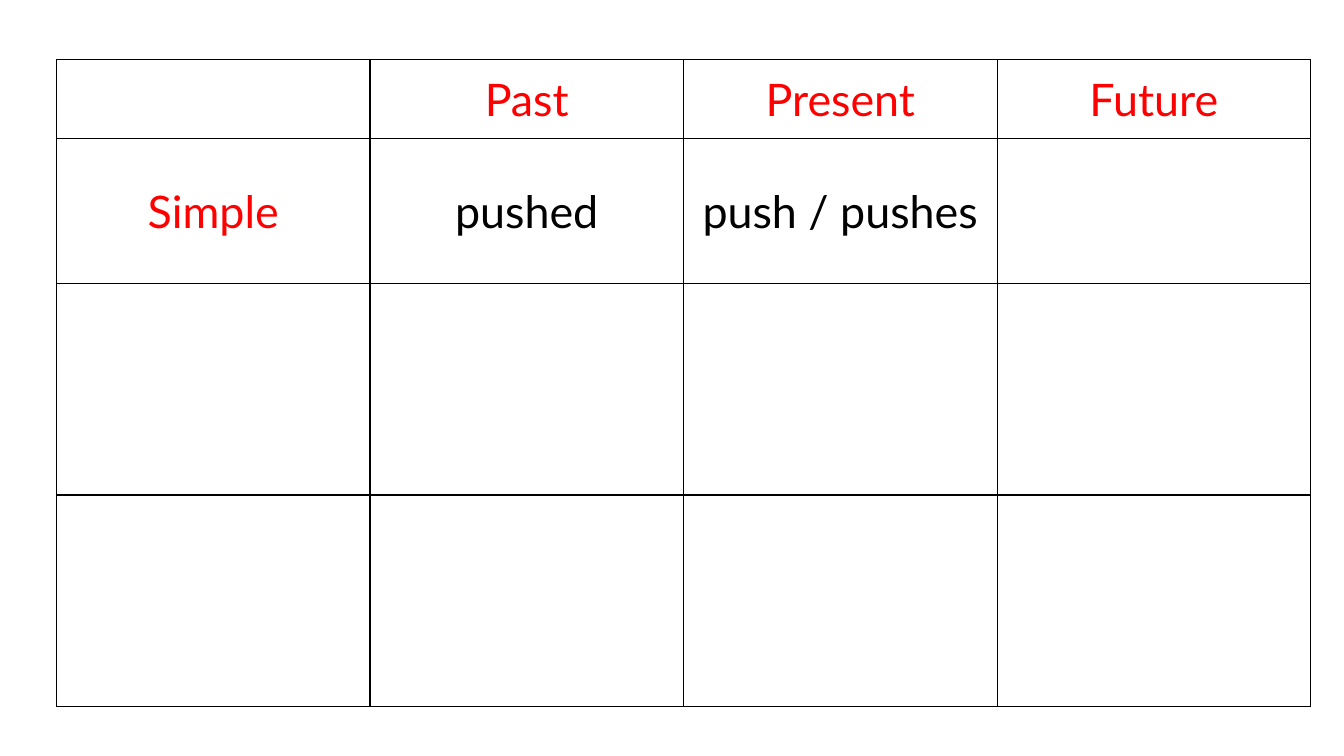
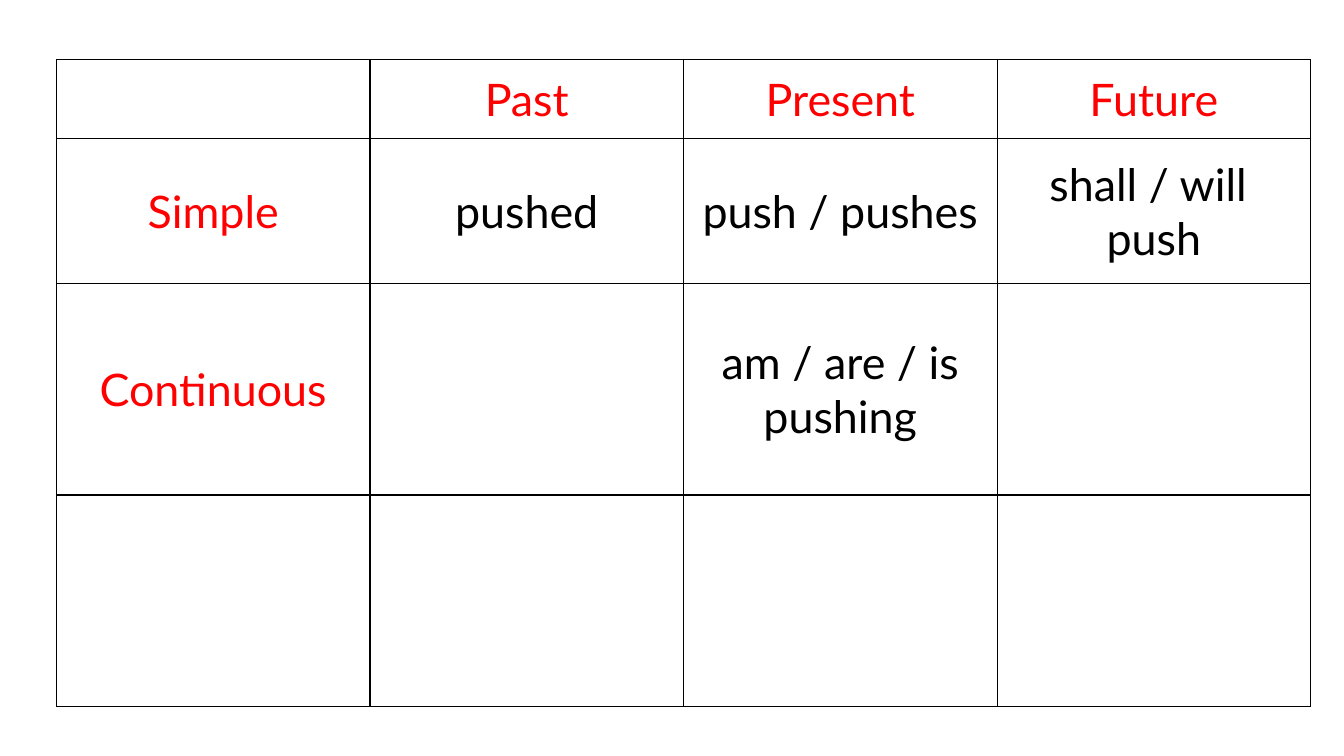
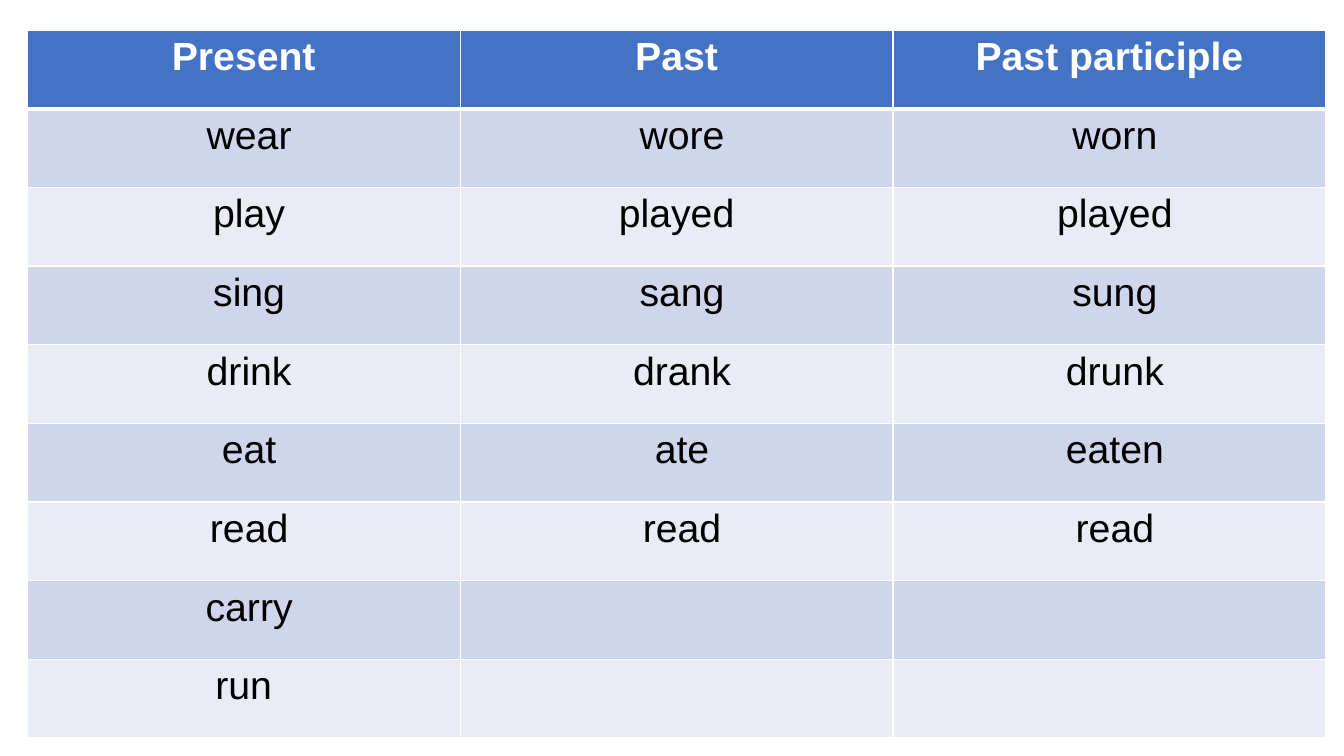
import pptx
import pptx.dml.color
import pptx.enum.text
import pptx.oxml
import pptx.oxml.ns
import pptx.util
from pptx.util import Inches

COLORS = {
    "black": "000000",
    "white": "FFFFFF",
    "label": "FF0000",
    "header": "4472C4",
    "odd_row": "CFD5EA",
    "even_row": "E9EBF5",
}
TENSE_ROW_HEIGHTS = [0.78, 1.44, 2.1, 2.1]
TENSE_HEADER = ["", "Past", "Present", "Future"]
EMPTY_ROW = [""] * 4
SIMPLE_ROW = ["Simple", "pushed", "push / pushes"]
TENSE_TABLES = [
    [TENSE_HEADER, SIMPLE_ROW + [""], EMPTY_ROW, EMPTY_ROW],
    [
        TENSE_HEADER,
        SIMPLE_ROW + ["shall / will \npush"],
        ["Continuous", "", "am / are / is\npushing", ""],
        EMPTY_ROW,
    ],
]
VERB_FORMS = [
    ["Present", "Past", "Past participle"],
    [" wear", " wore", " worn"],
    [" play", "played", " played"],
    [" sing", " sang", " sung"],
    [" drink", " drank", " drunk"],
    [" eat", " ate", " eaten"],
    [" read", " read", " read"],
    [" carry", "", ""],
    [" run ", "", ""],
]


class GrammarDeck:
    """Hold the table style and the current slide."""

    def __init__(self):
        self.presentation = pptx.Presentation()
        self.presentation.slide_width = Inches(13.33)
        self.presentation.slide_height = Inches(7.5)
        self.slide = None

    def add_slide(self):
        layout = self.presentation.slide_layouts[6]
        self.slide = self.presentation.slides.add_slide(layout)

    def add_table(self, rows, left, top, width, heights):
        shape = self.slide.shapes.add_table(
            len(rows), len(rows[0]), Inches(left), Inches(top),
            Inches(width), Inches(sum(heights)),
        )
        table = shape.table
        table.first_row = False
        table.horz_banding = False
        for row, height in zip(table.rows, heights):
            row.height = Inches(height)
        return table

    def set_borders(self, cell, color, widths):
        properties = cell._tc.get_or_add_tcPr()
        for side, width in zip("LRTB", widths):
            properties.append(pptx.oxml.parse_xml(
                f'<a:ln{side} {pptx.oxml.ns.nsdecls("a")} w="{pptx.util.Pt(width)}">'
                f'<a:solidFill><a:srgbClr val="{COLORS[color]}"/></a:solidFill>'
                f'</a:ln{side}>'
            ))

    def set_fill(self, cell, color):
        if color is None:
            cell.fill.background()
        else:
            cell.fill.solid()
            cell.fill.fore_color.rgb = pptx.dml.color.RGBColor.from_string(COLORS[color])

    def set_text(self, cell, text, font_name, size, color, bold=False):
        if not text:
            return
        cell.text = text
        for paragraph in cell.text_frame.paragraphs:
            paragraph.alignment = pptx.enum.text.PP_ALIGN.CENTER
            paragraph.font.name = font_name
            paragraph.font.size = pptx.util.Pt(size)
            paragraph.font.bold = bold
            paragraph.font.color.rgb = pptx.dml.color.RGBColor.from_string(COLORS[color])

    def add_tense_table(self, rows):
        table = self.add_table(rows, 0.56, 0.59, 12.44, TENSE_ROW_HEIGHTS)
        for row_index, row in enumerate(rows):
            for column_index, text in enumerate(row):
                cell = table.cell(row_index, column_index)
                is_label = row_index == 0 or column_index == 0
                self.set_borders(cell, "black", (1, 1, 1, 1))
                self.set_fill(cell, None)
                self.set_text(cell, text, "Lato", 32, "label" if is_label else "black")
                cell.vertical_anchor = pptx.enum.text.MSO_ANCHOR.MIDDLE

    def add_verb_table(self, rows):
        table = self.add_table(rows, 0.27, 0.3, 12.88, [0.78] * len(rows))
        for row_index, row in enumerate(rows):
            is_header = row_index == 0
            band = "header" if is_header else "odd_row" if row_index % 2 else "even_row"
            widths = (1, 1, 3 if row_index == 1 else 1, 3 if is_header else 1)
            for column_index, text in enumerate(row):
                cell = table.cell(row_index, column_index)
                self.set_borders(cell, "white", widths)
                self.set_fill(cell, band)
                self.set_text(
                    cell, text, "Arial", 28, "white" if is_header else "black", is_header
                )


def main():
    deck = GrammarDeck()
    for rows in TENSE_TABLES:
        deck.add_slide()
        deck.add_tense_table(rows)
    deck.add_slide()
    deck.add_verb_table(VERB_FORMS)
    deck.presentation.save("out.pptx")


if __name__ == "__main__":
    main()
